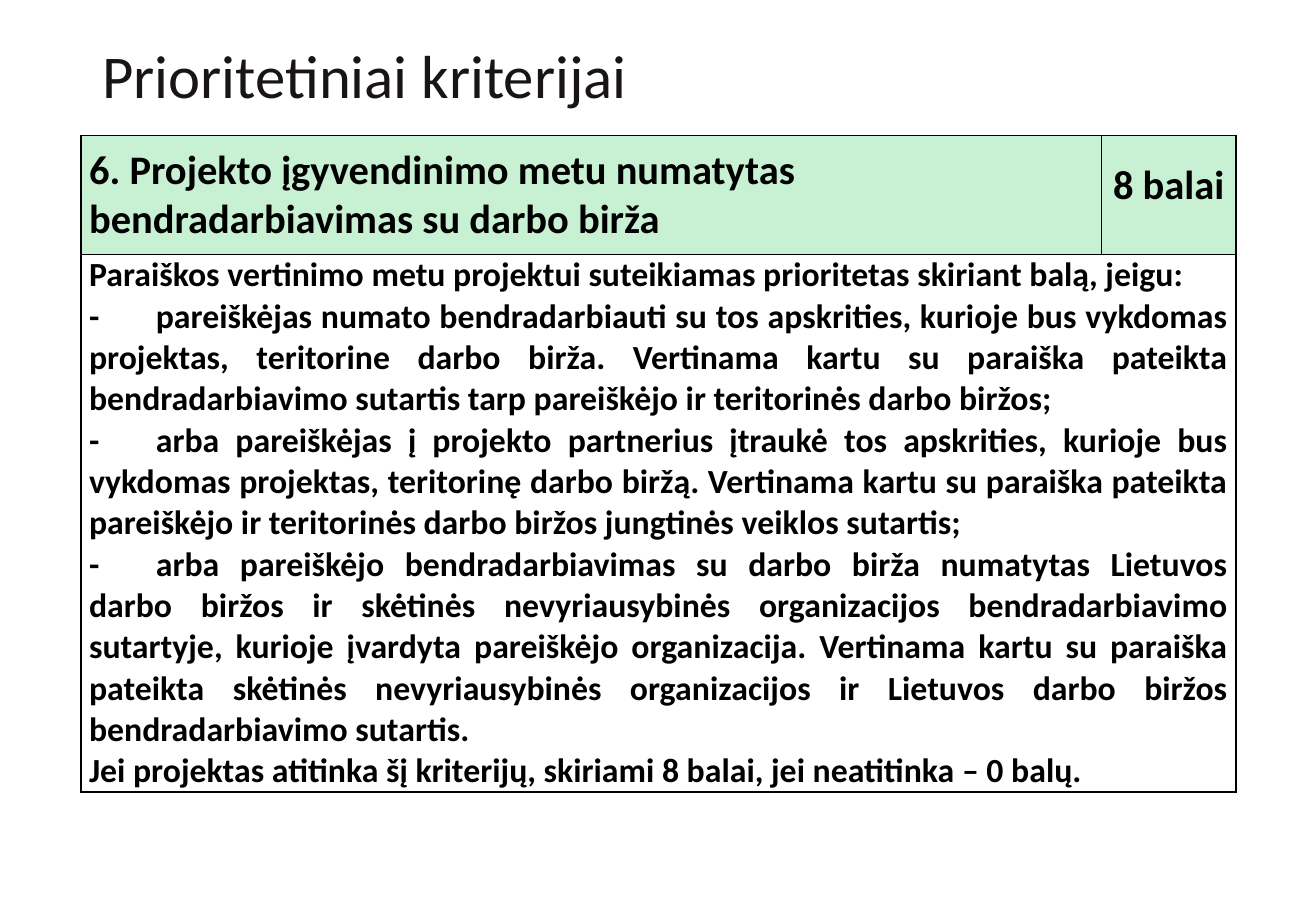
from dataclasses import dataclass

from lxml.etree import SubElement
from pptx import Presentation
from pptx.dml.color import RGBColor
from pptx.enum.text import MSO_ANCHOR as Anchor, PP_ALIGN as Align
from pptx.oxml.ns import qn
from pptx.util import Emu, Pt

EMU_PER_PX = 7620


@dataclass(frozen=True)
class Theme:
    font: str = "Calibri"
    title_color: RGBColor = RGBColor(0x19, 0x15, 0x14)
    text_color: RGBColor = RGBColor(0, 0, 0)
    header_fill: RGBColor = RGBColor(0xC7, 0xF1, 0xD2)
    border: str = "000000"
    border_width: Pt = Pt(1)
    title_size: Pt = Pt(36)
    header_size: Pt = Pt(24)
    body_size: Pt = Pt(20)


THEME = Theme()

CRITERION = "6. Projekto įgyvendinimo metu numatytas bendradarbiavimas su darbo birža"
POINTS = "8 balai"
CONDITIONS = [
    "Paraiškos vertinimo metu projektui suteikiamas prioritetas skiriant balą, jeigu:",
    "-\tpareiškėjas numato bendradarbiauti su tos apskrities, kurioje bus vykdomas "
    "projektas, teritorine darbo birža. Vertinama kartu su paraiška pateikta "
    "bendradarbiavimo sutartis tarp pareiškėjo ir teritorinės darbo biržos;",
    "-\tarba pareiškėjas į projekto partnerius įtraukė tos apskrities, kurioje bus "
    "vykdomas projektas, teritorinę darbo biržą. Vertinama kartu su paraiška pateikta "
    "pareiškėjo ir teritorinės darbo biržos jungtinės veiklos sutartis;",
    "-\tarba pareiškėjo bendradarbiavimas su darbo birža numatytas Lietuvos darbo "
    "biržos ir skėtinės nevyriausybinės organizacijos bendradarbiavimo sutartyje, "
    "kurioje įvardyta pareiškėjo organizacija. Vertinama kartu su paraiška pateikta "
    "skėtinės nevyriausybinės organizacijos ir Lietuvos darbo biržos "
    "bendradarbiavimo sutartis.",
    "Jei projektas atitinka šį kriterijų, skiriami 8 balai, jei neatitinka – 0 balų.",
]


def px(length):
    return Emu(length * EMU_PER_PX)


def set_font(paragraph, size, color, bold):
    font = paragraph.font
    font.name, font.size, font.bold = THEME.font, size, bold
    font.color.rgb = color


def add_tab_stop(paragraph, position):
    tabs = SubElement(paragraph._p.get_or_add_pPr(), qn("a:tabLst"))
    SubElement(tabs, qn("a:tab"), pos=str(px(position)), algn="l")


def add_borders(cell):
    properties = cell._tc.get_or_add_tcPr()
    for side in ("a:lnL", "a:lnR", "a:lnT", "a:lnB"):
        line = SubElement(properties, qn(side), w=str(THEME.border_width))
        fill = SubElement(line, qn("a:solidFill"))
        SubElement(fill, qn("a:srgbClr"), val=THEME.border)


def fill_cell(cell, texts, size, align, anchor, inset, tab=None):
    cell.margin_left = cell.margin_right = px(8)
    cell.margin_top = cell.margin_bottom = px(inset)
    cell.vertical_anchor = anchor
    frame = cell.text_frame
    for index, text in enumerate(texts):
        paragraph = frame.add_paragraph() if index else frame.paragraphs[0]
        paragraph.text = text
        paragraph.alignment = align
        if tab and "\t" in text:
            add_tab_stop(paragraph, tab)
        set_font(paragraph, size, THEME.text_color, True)


def place_title(slide, text, left, top, width, height):
    title = slide.shapes.title
    title.left, title.top, title.width, title.height = map(px, (left, top, width, height))
    frame = title.text_frame
    frame.text = text
    frame.word_wrap = True
    frame.vertical_anchor = Anchor.MIDDLE
    paragraph = frame.paragraphs[0]
    paragraph.alignment = Align.LEFT
    paragraph.line_spacing = 0.9
    set_font(paragraph, THEME.title_size, THEME.title_color, False)


def add_criterion_table(slide, left, top, width, height):
    points_width, header_height = 133, 102
    table = slide.shapes.add_table(2, 2, *map(px, (left, top, width, height))).table
    table.first_row = table.horz_banding = False
    table.columns[0].width = px(width - points_width)
    table.columns[1].width = px(points_width)
    table.rows[0].height = px(header_height)
    table.rows[1].height = px(height - header_height)

    for cell in table.iter_cells():
        add_borders(cell)
    criterion, points, conditions, last = table.iter_cells()
    conditions.merge(last)
    for cell in (criterion, points):
        cell.fill.solid()
        cell.fill.fore_color.rgb = THEME.header_fill
    conditions.fill.background()

    fill_cell(criterion, [CRITERION], THEME.header_size, Align.LEFT, Anchor.MIDDLE, 10)
    fill_cell(points, [POINTS], THEME.header_size, Align.CENTER, Anchor.MIDDLE, 5)
    points.text_frame.paragraphs[0].line_spacing = Pt(18)
    fill_cell(conditions, CONDITIONS, THEME.body_size, Align.JUSTIFY, Anchor.TOP, 0, tab=66)


def main():
    presentation = Presentation()
    presentation.slide_width, presentation.slide_height = px(1300), px(900)
    slide = presentation.slides.add_slide(presentation.slide_layouts[5])
    place_title(slide, "Prioritetiniai kriterijai", 89, 42, 1121, 71)
    add_criterion_table(slide, 80, 134, 1141, 577)
    presentation.save("out.pptx")


if __name__ == "__main__":
    main()
